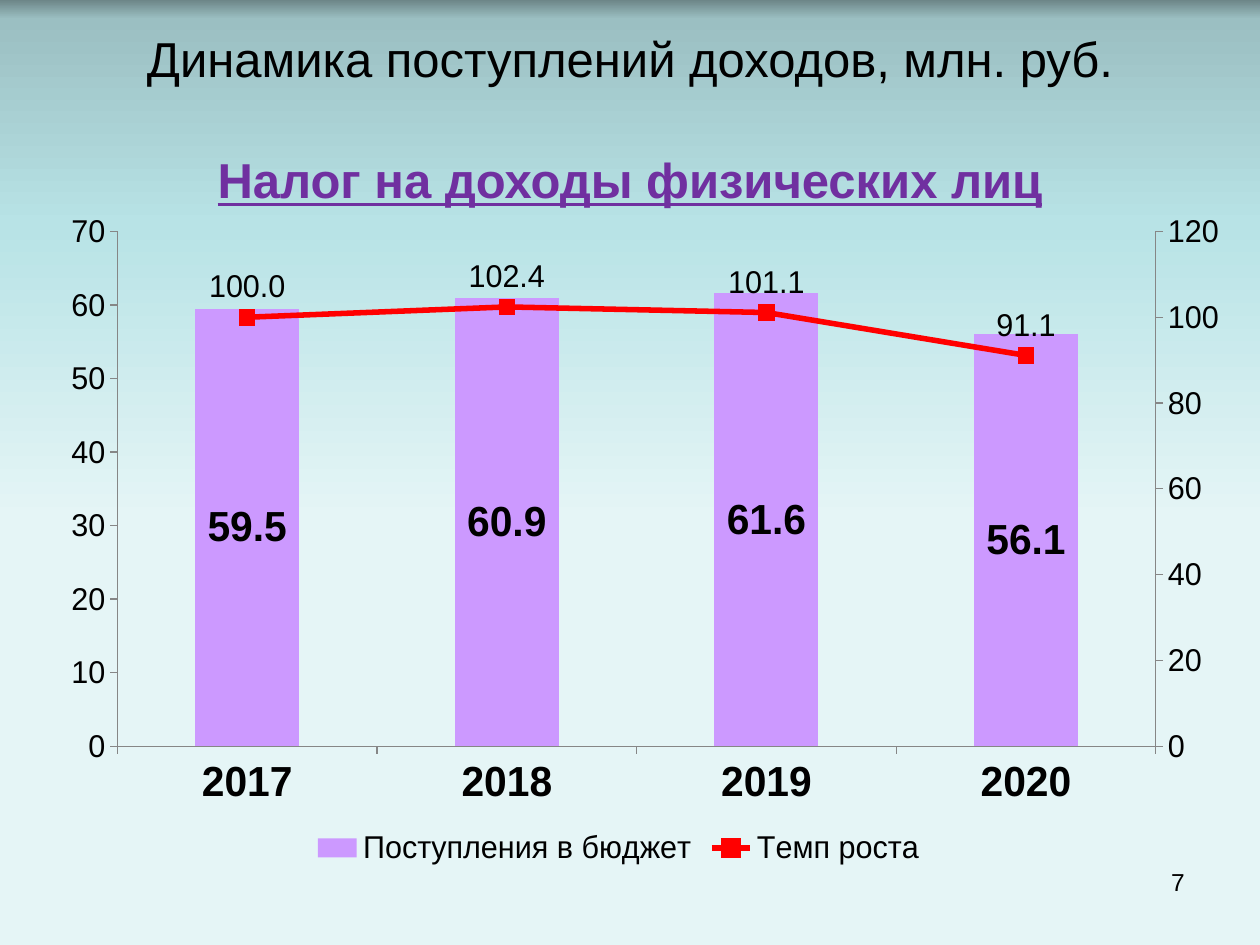
from lxml import etree
from pptx import Presentation
from pptx import util as u
from pptx.chart.data import CategoryChartData
from pptx.dml.color import RGBColor
from pptx.enum import chart as charts, text
from pptx.oxml import parse_xml
from pptx.oxml.ns import nsdecls, qn

PX = 914400 / 126
FONT = "Arial"


def color(value):
    return RGBColor.from_string(value)


def style(font, size=18, bold=False, underline=False, fill="000000"):
    font.name, font.size = FONT, u.Pt(size)
    font.bold, font.underline = bold, underline
    font.color.rgb = color(fill)


deck = Presentation()
deck.slide_width, deck.slide_height = u.Inches(10), u.Inches(7.5)
page = deck.slides.add_slide(deck.slide_layouts[6])

# Background gradient, top to bottom
fill = page.background.fill
fill.gradient()
fill.gradient_angle = 270
stops = page.background._cSld.find(".//" + qn("a:gsLst"))
for stop in list(stops):
    stops.remove(stop)
for percent, tone in [(0, "6D8688"), (2, "9BBFC2"), (24, "B8E3E6"), (55, "E5F5F6"), (100, "E5F5F8")]:
    stop = etree.SubElement(stops, qn("a:gs"), pos=str(percent * 1000))
    etree.SubElement(stop, qn("a:srgbClr"), val=tone)

# Combined chart
data = CategoryChartData(number_format="0.0")
data.categories = ["2017", "2018", "2019", "2020"]
data.add_series("Поступления в бюджет", [59.5, 60.9, 61.6, 56.1])
data.add_series("Темп роста", [100, 102.4, 101.1, 91.1])
place = [round(v * PX) for v in (53, 158, 1166, 714)]
chart = page.shapes.add_chart(charts.XL_CHART_TYPE.COLUMN_STACKED, *place, data).chart
style(chart.font)
chart.has_title = False
chart.has_legend = True
chart.legend.position = charts.XL_LEGEND_POSITION.BOTTOM
chart.legend.include_in_layout = False
style(chart.legend.font)

# Main axes
years, amounts = chart.category_axis, chart.value_axis
style(years.tick_labels.font, 24, bold=True)
style(amounts.tick_labels.font)
amounts.has_major_gridlines = False
amounts.minimum_scale, amounts.maximum_scale, amounts.major_unit = 0, 70, 10
amounts.tick_labels.number_format = "0"
amounts.tick_labels.number_format_is_linked = False
for axis in (years, amounts):
    axis.major_tick_mark = charts.XL_TICK_MARK.OUTSIDE
    axis.format.line.color.rgb = color("868686")
    axis.format.line.width = u.Pt(0.75)

# Second series becomes a line on its own axes
bars = chart.plots[0]
bars.gap_width, bars.overlap, bars.vary_by_categories = 150, 100, False
bar_xml = bars._element
growth_xml = bar_xml.findall(qn("c:ser"))[1]
for flag in growth_xml.findall(qn("c:invertIfNegative")):
    growth_xml.remove(flag)
line_xml = parse_xml(
    f'<c:lineChart {nsdecls("c")}><c:grouping val="standard"/><c:varyColors val="0"/>'
    '<c:marker val="1"/><c:axId val="5001"/><c:axId val="5002"/></c:lineChart>')
line_xml.insert(2, growth_xml)
bar_xml.addnext(line_xml)
right_axes = parse_xml(f'''<c:plotArea {nsdecls("c", "a")}>
<c:catAx><c:axId val="5001"/><c:scaling><c:orientation val="minMax"/></c:scaling>
<c:delete val="1"/><c:axPos val="b"/><c:crossAx val="5002"/><c:crosses val="autoZero"/></c:catAx>
<c:valAx><c:axId val="5002"/><c:scaling><c:orientation val="minMax"/><c:max val="120"/><c:min val="0"/></c:scaling>
<c:delete val="0"/><c:axPos val="r"/><c:numFmt formatCode="0" sourceLinked="0"/>
<c:majorTickMark val="out"/><c:minorTickMark val="none"/><c:tickLblPos val="nextTo"/>
<c:spPr><a:ln w="9525"><a:solidFill><a:srgbClr val="868686"/></a:solidFill></a:ln></c:spPr>
<c:crossAx val="5001"/><c:crosses val="max"/><c:majorUnit val="20"/></c:valAx></c:plotArea>''')
last_axis = amounts._element
for axis_xml in list(right_axes):
    last_axis.addnext(axis_xml)
    last_axis = axis_xml

# Inner plot area
area = bar_xml.getparent()
for layout in area.findall(qn("c:layout")):
    area.remove(layout)
sizes = "".join(f'<c:{key} val="{value}"/>' for key, value in
                [("x", 0.057), ("y", 0.103), ("w", 0.918), ("h", 0.721)])
area.insert(0, parse_xml(
    f'<c:layout {nsdecls("c")}><c:manualLayout><c:layoutTarget val="inner"/>'
    f'<c:xMode val="edge"/><c:yMode val="edge"/>{sizes}</c:manualLayout></c:layout>'))

# Series colours and labels
income, growth = (plot.series[0] for plot in chart.plots)
income.format.fill.solid()
income.format.fill.fore_color.rgb = color("CC99FF")
growth.smooth = False
growth.format.line.color.rgb = color("FF0000")
growth.format.line.width = u.Pt(3.25)
growth.marker.style, growth.marker.size = charts.XL_MARKER_STYLE.SQUARE, 9
growth.marker.format.fill.solid()
growth.marker.format.fill.fore_color.rgb = color("FF0000")
growth.marker.format.line.color.rgb = color("FF0000")
positions = charts.XL_LABEL_POSITION
for series, size, bold, position in [(income, 24, True, positions.CENTER), (growth, 18, False, positions.ABOVE)]:
    labels = series.data_labels
    labels.show_value = True
    labels.number_format, labels.number_format_is_linked = "0.0", False
    labels.position = position
    style(labels.font, size, bold)

# Title and page number
box = page.shapes.add_textbox(*[round(v * PX) for v in (21, 38, 1218, 161)])
frame = box.text_frame
frame.word_wrap = True
frame.vertical_anchor = text.MSO_ANCHOR.MIDDLE
para = frame.paragraphs[0]
para.alignment = text.PP_ALIGN.CENTER
span = para.add_run()
span.text = "Динамика поступлений доходов, млн. руб."
style(span.font, 28)
para = frame.add_paragraph()
para.alignment = text.PP_ALIGN.CENTER
para.space_before = u.Pt(36)
span = para.add_run()
span.text = "Налог на доходы физических лиц"
style(span.font, 28, bold=True, underline=True, fill="7030A0")

box = page.shapes.add_textbox(*[round(v * PX) for v in (903, 861, 294, 66)])
box.text_frame.word_wrap = True
para = box.text_frame.paragraphs[0]
para.alignment = text.PP_ALIGN.RIGHT
span = para.add_run()
span.text = "7"
style(span.font, 14)

deck.save("out.pptx")
